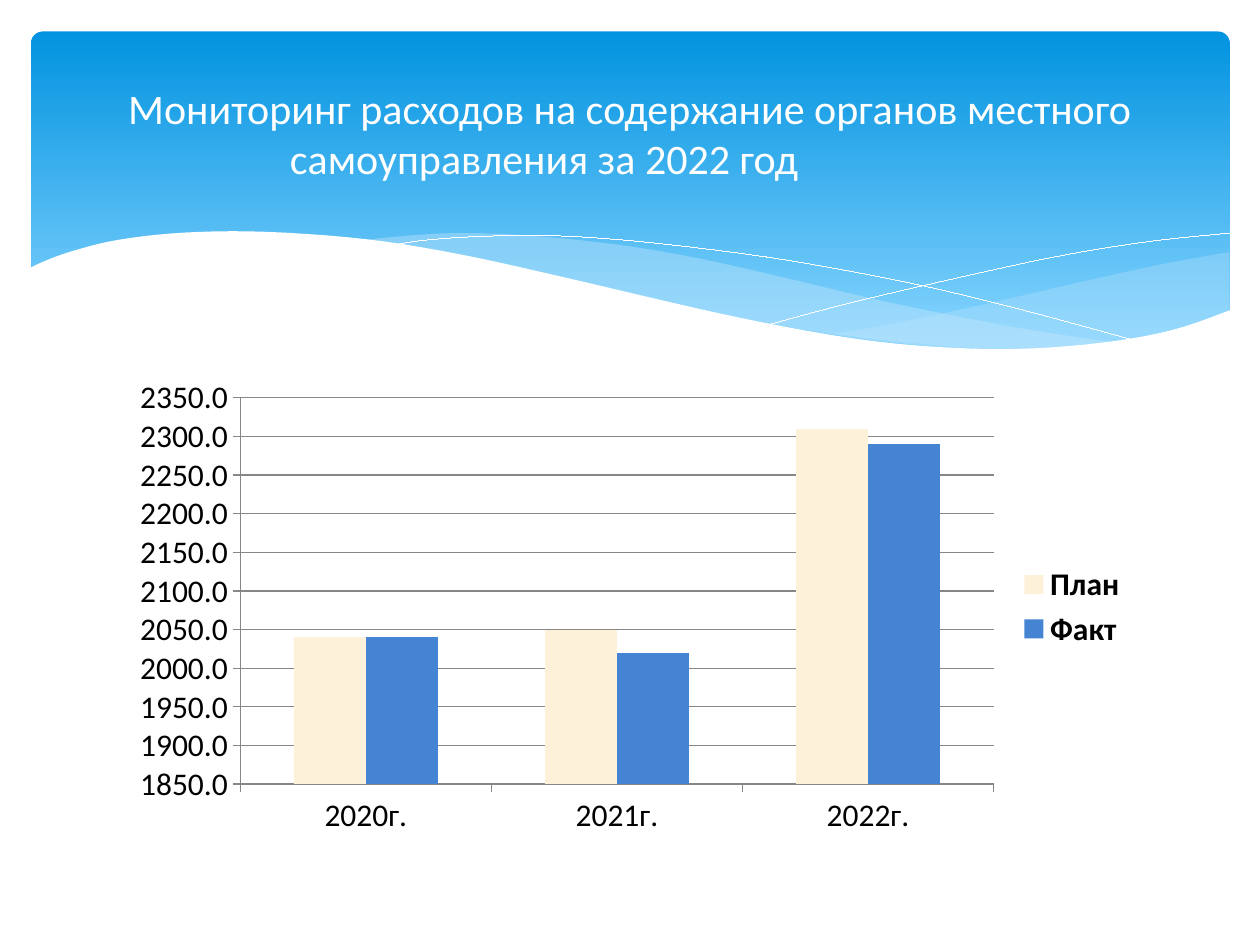
from lxml import etree
from pptx import Presentation
from pptx.chart.data import CategoryChartData
from pptx.dml.color import RGBColor
from pptx.enum import chart as ch, shapes, text
from pptx.oxml import ns
from pptx.util import Pt

FONT = "Calibri"
HUES = {"top": "0293E0", "base": "83D3FE", "wave": "C6E7FC", "white": "FFFFFF",
        "black": "000000", "grid": "878787", "plan": "FDF2D9", "fact": "4584D3"}

RIGHT_TOP = [(702.5, 144), (664, 151), (620, 160.6), (561, 174.2), (508, 185.4), (476, 190.8)]
RIGHT_LOW = [(476, 190.8), (518, 195.8), (562, 199.1), (601, 199.4), (634, 197.3),
             (668, 190.8), (702.5, 178)]
MID_TOP = [(642.5, 196.5), (581, 187.2), (508, 172.8), (453, 159.8), (399, 147.6),
           (352, 139.7), (302, 134.6), (260, 133.2), (225, 135.4), (206, 137.5)]
MID_LOW = [(206, 137.5), (246, 143.3), (291, 151.9), (353, 167), (408, 178.6),
           (456, 187.9), (510, 195.8), (557, 199.4), (603, 200.2), (642.5, 196.5)]
FALL = [(222.5, 140.4), (241, 137.5), (269, 135.4), (312, 134.6), (367, 138.2),
        (438, 146.9), (500, 157.7), (547, 167.8), (598, 180.7), (653, 195.8)]
RISE = [(441, 185), (484, 173.5), (539, 160.6), (602, 146.9), (655, 138.2), (702.5, 133.2)]
EDGE = [(703.4, 177.1), (670, 188.6), (630, 195.8), (582, 199.4), (536, 198.3),
        (495, 194.4), (451, 187.2), (399, 176.4), (322, 158.4), (263, 145.4),
        (210, 136.8), (152, 132.5), (106, 132.9), (68, 137), (42, 143.3),
        (26, 149), (16.6, 153.4)]
FLOOR = [(16.6, 236.9), (703.4, 236.9)]


def hue(name):
    return RGBColor.from_string(HUES[name])


def paint(fill, name):
    fill.solid()
    fill.fore_color.rgb = hue(name)


def curve(knots, steps=5):
    ends = [knots[0], *knots, knots[-1]]
    dots = [knots[0]]
    for a, b, c, d in zip(ends, ends[1:], ends[2:], ends[3:]):
        for step in range(1, steps + 1):
            t = step / steps
            dots.append(tuple(
                (2 * q + (r - p) * t + (2 * p - 5 * q + 4 * r - s) * t ** 2
                 + (3 * q - p - 3 * r + s) * t ** 3) / 2
                for p, q, r, s in zip(a, b, c, d)))
    return dots


def add_path(slide, dots, close):
    units = [(x * 100, y * 100) for x, y in dots]
    form = slide.shapes.build_freeform(*units[0], scale=Pt(1) / 100)
    form.add_line_segments(units[1:], close=close)
    shape = form.convert_to_shape()
    shape.shadow.inherit = False
    return shape


def add_wave(slide, dots, name, alpha=100):
    shape = add_path(slide, dots, True)
    paint(shape.fill, name)
    shape.line.fill.background()
    if alpha < 100:
        color = shape.fill._xPr.find(".//" + ns.qn("a:srgbClr"))
        etree.SubElement(color, ns.qn("a:alpha"), val=str(alpha * 1000))


def add_thread(slide, knots):
    shape = add_path(slide, curve(knots), False)
    shape.fill.background()
    paint(shape.line.fill, "white")
    shape.line.width = Pt(0.01)


def add_band(slide):
    band = slide.shapes.add_shape(shapes.MSO_SHAPE.ROUNDED_RECTANGLE,
                                  Pt(17.8), Pt(18), Pt(684.9), Pt(194.4))
    band.adjustments[0] = 0.034
    band.shadow.inherit = False
    band.line.fill.background()
    band.fill.gradient()
    band.fill.gradient_angle = 270
    for stop, place, name in zip(band.fill.gradient_stops, (0, 0.9), ("top", "base")):
        stop.position = place
        stop.color.rgb = hue(name)


def style_font(font, size, name, bold=False):
    font.name = FONT
    font.size = Pt(size)
    font.bold = bold
    font.color.rgb = hue(name)


def style_line(form):
    paint(form.line.fill, "grid")
    form.line.width = Pt(0.75)


def add_chart(slide):
    data = CategoryChartData(number_format="0.0")
    data.categories = ["2020г.", "2021г.", "2022г."]
    data.add_series("План", (2040, 2050, 2310))
    data.add_series("Факт", (2040, 2020, 2290))
    chart = slide.shapes.add_chart(ch.XL_CHART_TYPE.COLUMN_CLUSTERED, Pt(68.4), Pt(211),
                                   Pt(583.2), Pt(271.4), data).chart
    style_font(chart.font, 18, "black")
    chart.has_title = False
    chart.has_legend = True
    chart.legend.position = ch.XL_LEGEND_POSITION.RIGHT
    chart.legend.include_in_layout = False
    style_font(chart.legend.font, 18, "black", True)
    plot = chart.plots[0]
    plot.vary_by_categories = False
    plot.gap_width = 150
    plot.overlap = 0
    for series, name in zip(plot.series, ("plan", "fact")):
        paint(series.format.fill, name)
    for axis in (chart.category_axis, chart.value_axis):
        axis.major_tick_mark = ch.XL_TICK_MARK.OUTSIDE
        axis.minor_tick_mark = ch.XL_TICK_MARK.NONE
        style_line(axis.format)
    axis = chart.value_axis
    axis.minimum_scale, axis.maximum_scale, axis.major_unit = 1850, 2350, 50
    axis.has_major_gridlines = True
    style_line(axis.major_gridlines.format)
    axis.tick_labels.number_format = "0.0"
    axis.tick_labels.number_format_is_linked = False


def set_title(slide, words):
    title = slide.shapes.title
    title.left, title.top, title.width, title.height = Pt(36), Pt(26.6), Pt(648), Pt(98.6)
    frame = title.text_frame
    frame.word_wrap = True
    frame.auto_size = text.MSO_AUTO_SIZE.NONE
    frame.vertical_anchor = text.MSO_ANCHOR.MIDDLE
    para = frame.paragraphs[0]
    para.alignment = text.PP_ALIGN.LEFT
    props = para._p.get_or_add_pPr()
    props.set("marL", str(Pt(122.5)))
    props.set("indent", str(Pt(-92.5)))
    run = para.add_run()
    run.text = words
    style_font(run.font, 24, "white")
    slide.shapes._spTree.append(title._element)


def main():
    deck = Presentation()
    deck.slide_width, deck.slide_height = Pt(720), Pt(540)
    slide = deck.slides.add_slide(deck.slide_layouts[5])
    paint(slide.background.fill, "white")
    add_band(slide)
    add_wave(slide, curve(RIGHT_TOP) + curve(RIGHT_LOW), "wave", 29)
    add_wave(slide, curve(MID_TOP) + curve(MID_LOW), "wave", 40)
    for knots in (FALL, RISE):
        add_thread(slide, knots)
    add_wave(slide, curve(EDGE) + FLOOR, "white")
    add_chart(slide)
    set_title(slide, "Мониторинг расходов на содержание органов местного самоуправления за 2022 год")
    deck.save("out.pptx")


if __name__ == "__main__":
    main()
